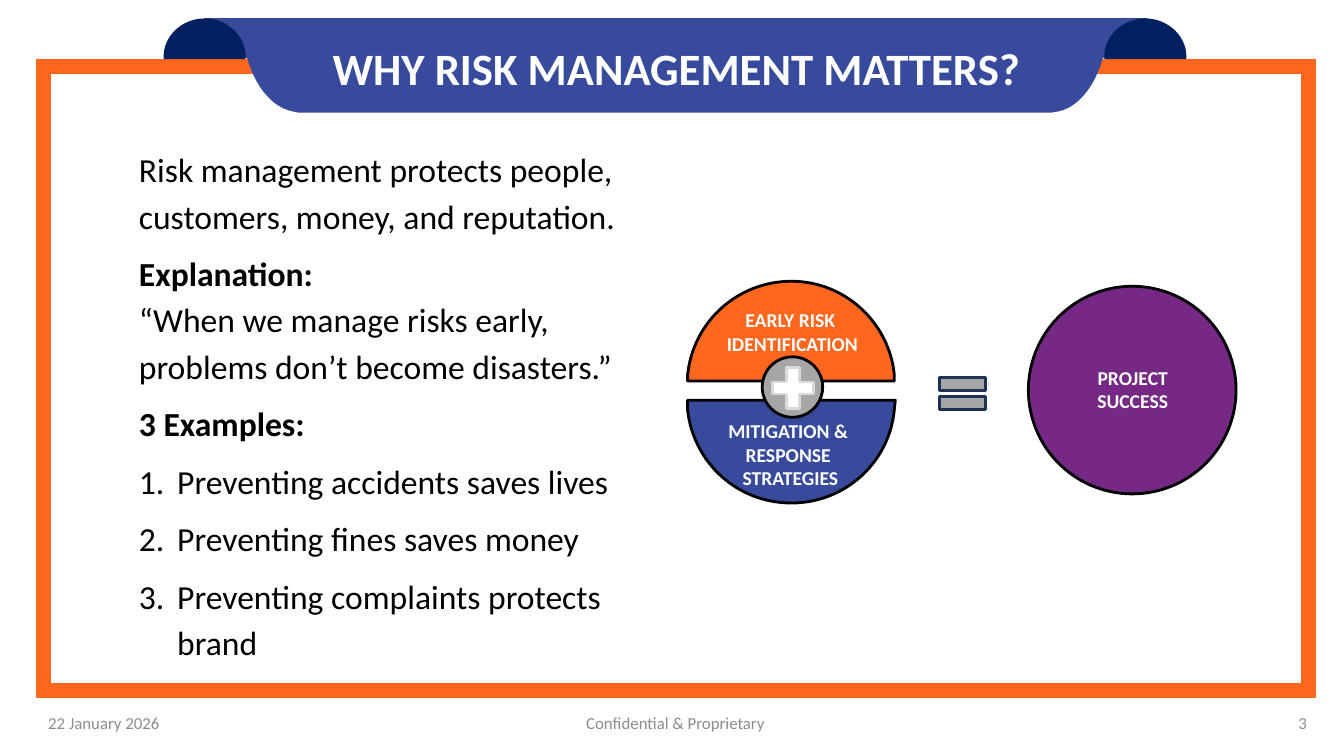
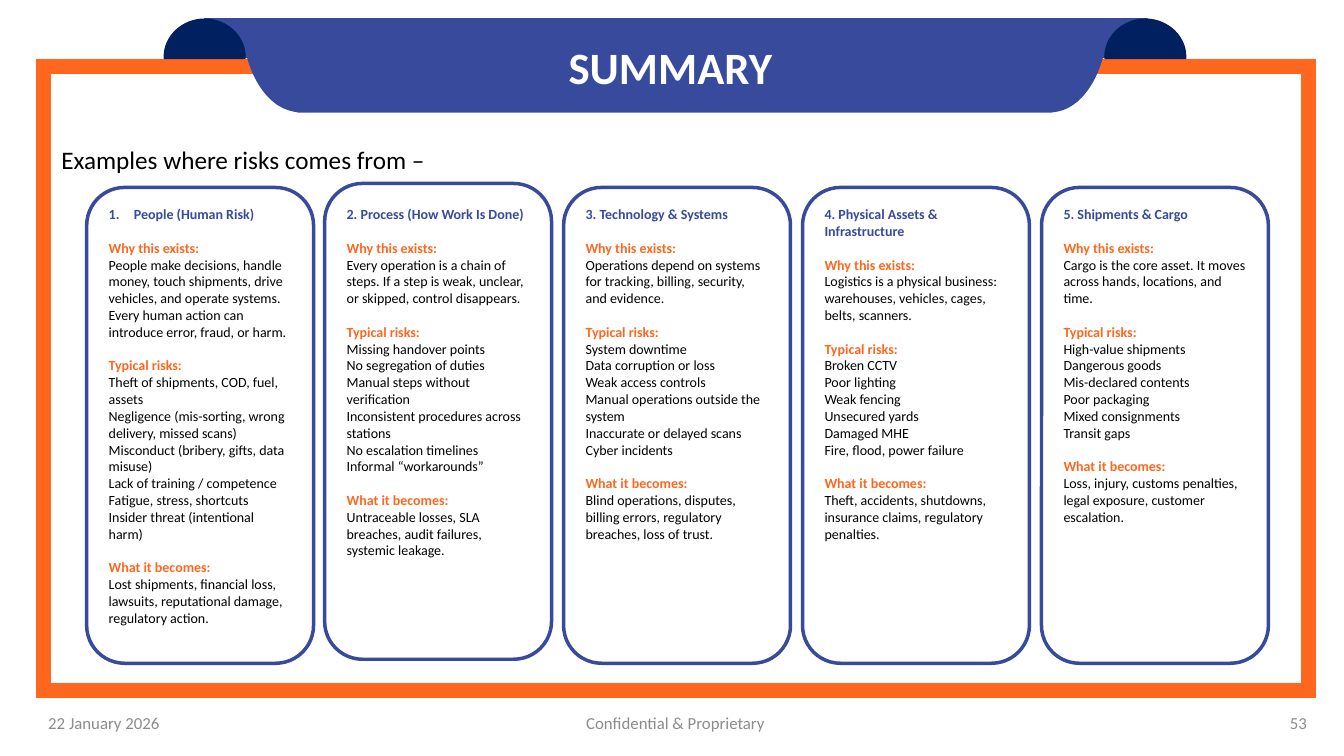
from lxml.etree import SubElement
from pptx import Presentation
from pptx.dml.color import RGBColor
from pptx.enum.shapes import MSO_SHAPE
from pptx.enum.text import MSO_ANCHOR, PP_ALIGN
from pptx.oxml.ns import qn
from pptx.util import Pt

PX = 9144  # 100 px to the inch
FONT = "Calibri"
COLORS = {
    "orange": "FF671F", "blue": "374A9C", "navy": "002060", "purple": "752884",
    "gray": "A6A6A6", "light": "D9D9D9", "footer": "8C8C8C", "edge": "1E3256",
    "black": "000000", "white": "FFFFFF",
}


def draw(s, kind, geom, fill, line, width=1, adj=None):
    """Draw a preset in a box, or with kind None an outline of points and curves."""
    if kind is None:
        # A step of one point is a line, a step of three points is a curve
        points = [(x * PX, y * PX) for step in geom for x, y in step]
        builder = s.shapes.build_freeform(*points[0])
        builder.add_line_segments(points[1:], close=True)
        sp = builder.convert_to_shape()
        segments = iter(list(sp._element.iter(qn("a:lnTo"))))
        for step in geom[1:]:
            first = next(segments)
            if len(step) == 3:
                first.tag = qn("a:cubicBezTo")
                for _ in range(2):
                    extra = next(segments)
                    first.append(extra[0])
                    extra.getparent().remove(extra)
    else:
        sp = s.shapes.add_shape(kind, *[v * PX for v in geom])
    if adj is not None:
        sp.adjustments[0] = adj
    sp.shadow.inherit = False
    if fill:
        sp.fill.solid()
        sp.fill.fore_color.rgb = RGBColor.from_string(COLORS[fill])
    else:
        sp.fill.background()
    sp.line.color.rgb = RGBColor.from_string(COLORS[line])
    sp.line.width = Pt(width)


def add_text(s, box, paras, font, wrap=True, anchor=MSO_ANCHOR.TOP, **layout):
    """Each paragraph is (runs, layout); its runs (text, font) sit on separate lines."""
    tf = s.shapes.add_textbox(*[v * PX for v in box]).text_frame
    tf.word_wrap = wrap
    tf.vertical_anchor = anchor
    for i, (runs, extra) in enumerate(paras):
        p = tf.paragraphs[0] if i == 0 else tf.add_paragraph()
        values = {**layout, **extra}
        indent = values.pop("number", 0)
        for name, value in values.items():
            setattr(p, name, value)
        if indent:
            pPr = p._p.get_or_add_pPr()
            pPr.set("marL", str(indent * PX))
            pPr.set("indent", str(-indent * PX))
            SubElement(pPr, qn("a:buFont"), typeface="+mj-lt")
            SubElement(pPr, qn("a:buAutoNum"), type="arabicPeriod")
        for j, (text, change) in enumerate(runs):
            if j:
                p.add_line_break()
            r = p.add_run()
            r.text = text
            for name, value in {"name": FONT, **font, **change}.items():
                if name == "color":
                    r.font.color.rgb = RGBColor.from_string(COLORS[value])
                else:
                    setattr(r.font, name, value)


prs = Presentation()
prs.slide_width, prs.slide_height = 1333 * PX, 750 * PX

banner = [
    [(241, 20)], [(352, 20)], [(988, 20)], [(1098, 20)], [(1098, 21)],
    [(1098, 67), (1076, 105), (1049, 110)], [(1043, 111)], [(988, 111)],
    [(352, 111)], [(296, 111)], [(291, 110)],
    [(263, 105), (241, 67), (241, 21)],
]

# Shared frame, banner, title and footer
slides = []
for title, title_box, number in [
    ("WHY RISK MANAGEMENT MATTERS?", (320, 35, 713, 64), "3"),
    ("SUMMARY", (554, 34, 225, 64), "53"),
]:
    s = prs.slides.add_slide(prs.slide_layouts[6])
    slides.append(s)
    draw(s, MSO_SHAPE.FRAME, (36, 59, 1269, 633), "orange", "orange", adj=0.022)
    draw(s, MSO_SHAPE.RECTANGLE, (203, 19, 935, 38), "blue", "blue")
    draw(s, None, banner, "blue", "blue")
    for x in (203, 1136):
        draw(s, None, [
            [(x, 19)], [(x + 22, 19), (x + 40, 36), (x + 40, 56)], [(x + 40, 58)],
            [(x - 40, 58)], [(x - 40, 56)], [(x - 40, 36), (x - 22, 19), (x, 19)],
        ], "navy", "navy")
    for text, x, width, align in [
        ("22 January 2026", 38, 228, PP_ALIGN.LEFT),
        ("Confidential & Proprietary", 445, 450, PP_ALIGN.CENTER),
        (number, 1078, 228, PP_ALIGN.RIGHT),
    ]:
        add_text(s, (x, 697, width, 40), [([(text, {})], {})],
                 {"size": Pt(12), "color": "footer"},
                 anchor=MSO_ANCHOR.MIDDLE, alignment=align)
    add_text(s, title_box, [([(title, {})], {})],
             {"size": Pt(32), "color": "white", "bold": True}, wrap=False)

# Slide 1: explanation
s = slides[0]
bold = {"bold": True}
body = [
    ([("Risk management protects people, customers, money, and reputation.", {})], {}),
    ([("Explanation:", bold),
      ("“When we manage risks early, problems don’t become disasters.”", {})], {}),
    ([("3 Examples:", bold)], {}),
]
for example in ("Preventing accidents saves lives", "Preventing fines saves money",
                "Preventing complaints protects brand"):
    body.append(([(example, {})], {"number": 38}))
add_text(s, (128, 137, 524, 528), body, {"size": Pt(24), "color": "black"},
         line_spacing=1.15, space_after=Pt(8))

# Slide 1: two halves equal success
upper_half = [
    [(785, 279)], [(838, 279), (882, 320), (887, 372)], [(887, 378)],
    [(682, 378)], [(682, 372)], [(687, 320), (731, 279), (785, 279)],
]
lower_half = [
    [(682, 397)], [(888, 397)], [(887, 407)], [(882, 459), (838, 499), (785, 499)],
    [(731, 499), (688, 459), (682, 407)],
]
draw(s, MSO_SHAPE.OVAL, (1020, 284, 206, 206), "purple", "black", 2)
draw(s, MSO_SHAPE.MATH_EQUAL, (924, 364, 62, 53), "gray", "edge", 2)
draw(s, None, upper_half, "orange", "black", 2)
draw(s, None, lower_half, "blue", "black", 2)
for box, lines in [
    ((710, 301, 152, 57), ["EARLY RISK ", "IDENTIFICATION"]),
    ((712, 411, 144, 81), ["MITIGATION & ", "RESPONSE ", "STRATEGIES"]),
    ((1078, 358, 91, 57), ["PROJECT", "SUCCESS"]),
]:
    add_text(s, box, [([(line, {})], {}) for line in lines],
             {"size": Pt(14), "color": "white", "bold": True},
             wrap=False, alignment=PP_ALIGN.CENTER)
draw(s, MSO_SHAPE.OVAL, (756, 354, 60, 60), "gray", "black", 2)
draw(s, MSO_SHAPE.CROSS, (766, 365, 41, 40), "white", "light", 2, adj=0.35)

# Slide 2: risk sources, as heading, why, risks, outcome
s = slides[1]
sources = [
    ("People (Human Risk)",
     "People make decisions, handle money, touch shipments, drive vehicles, and operate "
     "systems. Every human action can introduce error, fraud, or harm.",
     ["Theft of shipments, COD, fuel, assets",
      "Negligence (mis-sorting, wrong delivery, missed scans)",
      "Misconduct (bribery, gifts, data misuse)", "Lack of training / competence",
      "Fatigue, stress, shortcuts", "Insider threat (intentional harm)"],
     "Lost shipments, financial loss, lawsuits, reputational damage, regulatory action."),
    ("2. Process (How Work Is Done)",
     "Every operation is a chain of steps. If a step is weak, unclear, or skipped, "
     "control disappears.",
     ["Missing handover points", "No segregation of duties",
      "Manual steps without verification", "Inconsistent procedures across stations",
      "No escalation timelines", "Informal “workarounds”"],
     "Untraceable losses, SLA breaches, audit failures, systemic leakage."),
    ("3. Technology & Systems",
     "Operations depend on systems for tracking, billing, security, and evidence.",
     ["System downtime", "Data corruption or loss", "Weak access controls",
      "Manual operations outside the system", "Inaccurate or delayed scans",
      "Cyber incidents"],
     "Blind operations, disputes, billing errors, regulatory breaches, loss of trust."),
    ("4. Physical Assets & Infrastructure",
     "Logistics is a physical business: warehouses, vehicles, cages, belts, scanners.",
     ["Broken CCTV", "Poor lighting", "Weak fencing", "Unsecured yards", "Damaged MHE",
      "Fire, flood, power failure"],
     "Theft, accidents, shutdowns, insurance claims, regulatory penalties."),
    ("5. Shipments & Cargo",
     "Cargo is the core asset. It moves across hands, locations, and time.",
     ["High-value shipments", "Dangerous goods", "Mis-declared contents",
      "Poor packaging", "Mixed consignments", "Transit gaps"],
     "Loss, injury, customs penalties, legal exposure, customer escalation."),
]
heading = {"color": "blue", "bold": True}
label = {"color": "orange", "bold": True}
gap = {"space_before": Pt(12)}
for i, (name, why, risks, outcome) in enumerate(sources):
    x = 86 + (1033 - 86) * i // 4
    draw(s, MSO_SHAPE.ROUNDED_RECTANGLE, (x, 182 if i == 1 else 186, 225, 472),
         None, "blue", 2.5)
    paras = [
        ([(name, heading)], {"number": 25 if i == 0 else 0}),
        ([("Why this exists:", label), (why, {})], gap),
        ([("Typical risks:", label)], gap),
        *[([(risk, {})], {}) for risk in risks],
        ([("What it becomes:", label), (outcome, {})], gap),
    ]
    add_text(s, (x + 12, 199, 200, 448), paras, {"size": Pt(10), "color": "black"})
add_text(s, (51, 138, 390, 40), [([("Examples where risks comes from –", {})], {})],
         {"size": Pt(18), "color": "black"}, wrap=False)

prs.save("out.pptx")
